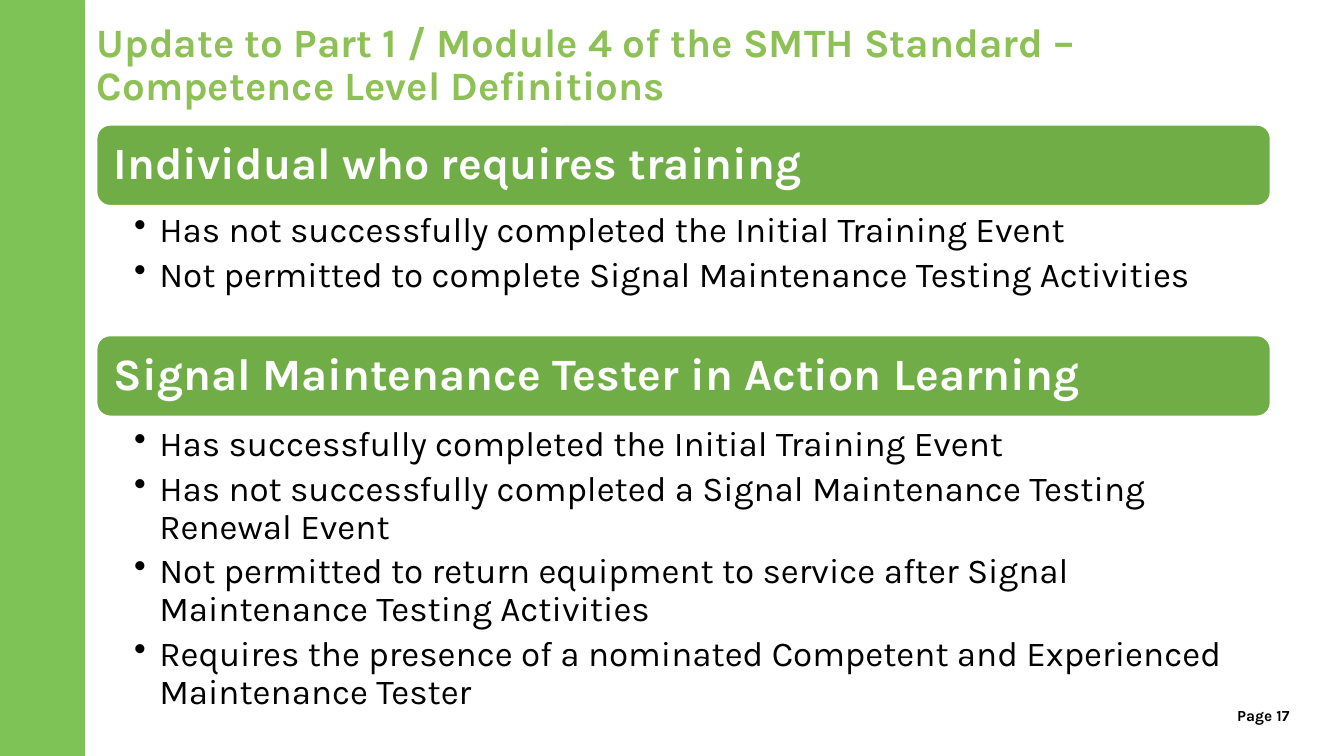
from lxml import etree
from pptx import Presentation
from pptx.dml.color import RGBColor
from pptx.enum.shapes import MSO_SHAPE
from pptx.enum.text import MSO_ANCHOR, PP_ALIGN
from pptx.oxml.ns import qn
from pptx.util import Inches, Pt

RECT, ROUNDED = MSO_SHAPE.RECTANGLE, MSO_SHAPE.ROUNDED_RECTANGLE
TOP, MIDDLE = MSO_ANCHOR.TOP, MSO_ANCHOR.MIDDLE
LEFT, CENTER = PP_ALIGN.LEFT, PP_ALIGN.CENTER

COLORS = {
    "band": "7DC356",
    "title": "8DC055",
    "heading": "70AD47",
    "white": "FFFFFF",
    "black": "000000",
}
FONT = "Karla"
COLUMN_LEFT, COLUMN_WIDTH = 0.96, 11.64
HEADING_HEIGHT = 0.8
INDENT = Inches(0.25)

# Each section: heading top, list top, list height, heading, list items
SECTIONS = [
    (1.24, 2.07, 1.34, "Individual who requires training", [
        "Has not successfully completed the Initial Training Event",
        "Not permitted to complete Signal Maintenance Testing Activities",
    ]),
    (3.33, 4.19, 2.83, "Signal Maintenance Tester in Action Learning", [
        "Has successfully completed the Initial Training Event",
        "Has not successfully completed a Signal Maintenance Testing Renewal Event",
        "Not permitted to return equipment to service after Signal Maintenance Testing Activities",
        "Requires the presence of a nominated Competent and Experienced Maintenance Tester",
    ]),
]


def add_block(shape_type, left, top, width, height, fill, line, line_width):
    block = slide.shapes.add_shape(
        shape_type, Inches(left), Inches(top), Inches(width), Inches(height))
    block.shadow.inherit = False
    block.fill.solid()
    block.fill.fore_color.rgb = RGBColor.from_string(COLORS[fill])
    block.line.color.rgb = RGBColor.from_string(COLORS[line])
    block.line.width = Pt(line_width)
    return block


def write(shape, text, size, color, insets, bold=True, anchor=MIDDLE, align=LEFT):
    frame = shape.text_frame
    frame.text = text
    frame.word_wrap = True
    frame.vertical_anchor = anchor
    (frame.margin_left, frame.margin_top,
     frame.margin_right, frame.margin_bottom) = [Inches(inset) for inset in insets]
    for paragraph in frame.paragraphs:
        paragraph.alignment = align
        paragraph.line_spacing = 0.9
        font = paragraph.runs[0].font
        font.name, font.size, font.bold = FONT, Pt(size), bold
        font.color.rgb = RGBColor.from_string(COLORS[color])
    return frame.paragraphs


prs = Presentation()
prs.slide_width, prs.slide_height = Inches(13.33), Inches(7.5)
slide = prs.slides.add_slide(prs.slide_layouts[6])

# Page number
page_number = slide.shapes.add_textbox(Inches(11.72), Inches(7.01), Inches(1.62), Inches(0.19))
page_line = write(page_number, "Page 17", 11, "black", (0, 0, 0, 0), anchor=TOP, align=CENTER)
page_line[0].line_spacing = 1.0

# Green side band
add_block(RECT, -0.01, 0, 0.85, 7.5, "band", "band", 0.5)

# Title
title = slide.shapes.add_textbox(Inches(COLUMN_LEFT), Inches(0.2), Inches(9.87), Inches(0.91))
write(title, "Update to Part 1 / Module 4 of the SMTH Standard – Competence Level Definitions",
      28.8, "title", (0, 0.05, 0, 0.05))

# Competence levels: heading bar with its bulleted list
for heading_top, list_top, list_height, heading, items in SECTIONS:
    heading_bar = add_block(ROUNDED, COLUMN_LEFT, heading_top, COLUMN_WIDTH, HEADING_HEIGHT,
                            "heading", "white", 1)
    # The rounded corner takes up part of the left inset
    write(heading_bar, heading, 32, "white", (0.13, 0.13, 0.13, 0.13))

    definitions = slide.shapes.add_textbox(
        Inches(COLUMN_LEFT), Inches(list_top), Inches(COLUMN_WIDTH), Inches(list_height))
    for item in write(definitions, "\n".join(items), 25, "black",
                      (0.37, 0.04, 0.25, 0.04), bold=False, anchor=TOP):
        item.space_after = Pt(5)
        properties = item._p.get_or_add_pPr()
        properties.set("marL", str(INDENT))
        properties.set("indent", str(-INDENT))
        etree.SubElement(properties, qn("a:buChar")).set("char", "•")

prs.save("out.pptx")
